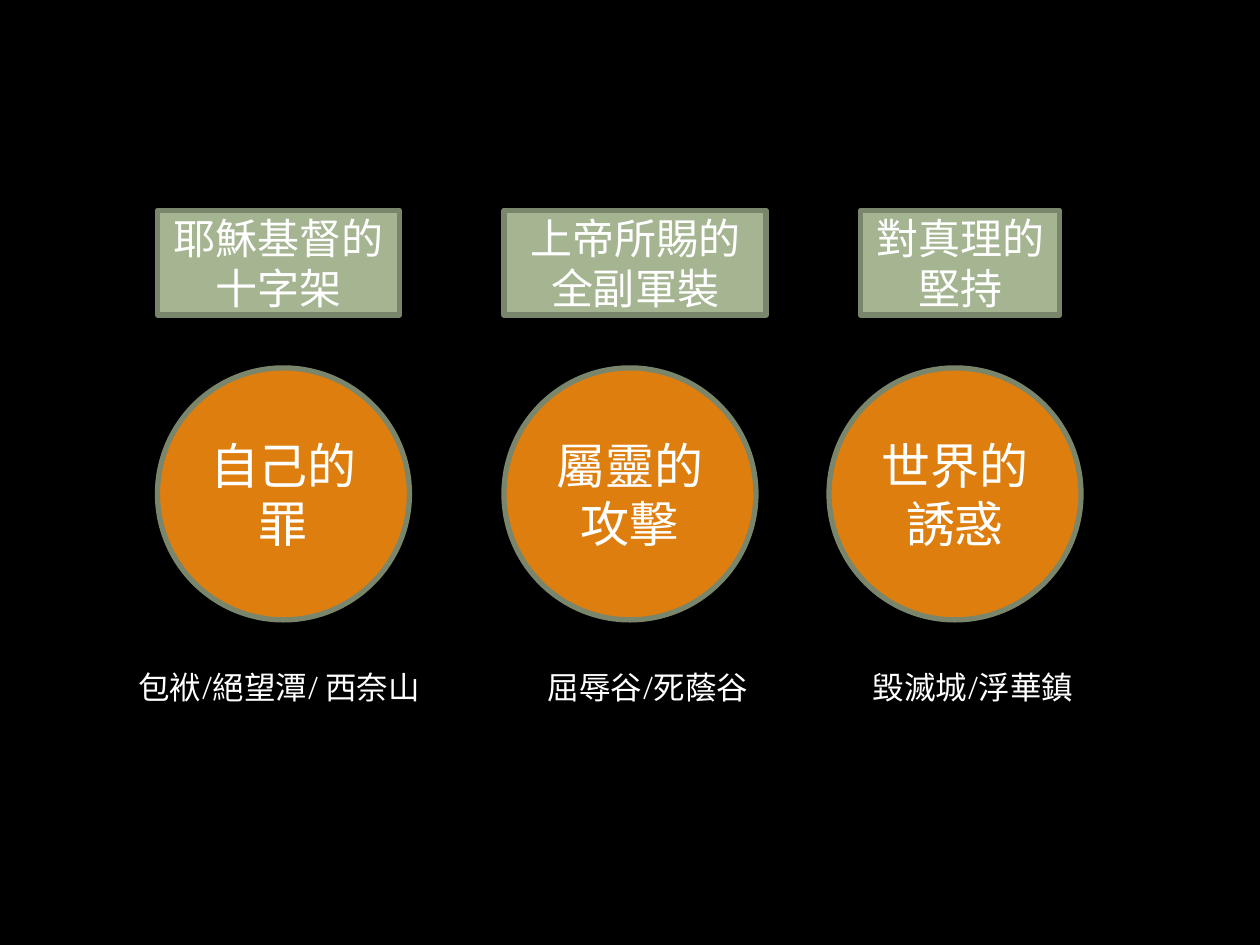
from pptx import Presentation
from pptx.dml.color import RGBColor
from pptx.enum.shapes import MSO_SHAPE
from pptx.enum.text import MSO_ANCHOR, MSO_AUTO_SIZE, PP_ALIGN
from pptx.util import Inches, Pt

# Content: one column per struggle; each part is (text, left, width)
COLUMNS = [
    {"remedy": ("耶穌基督的十字架", 1.25, 1.92),
     "threat": ("自己的罪", 1.25, 2),
     "places": ("包袱/絕望潭/ 西奈山", 1, 2.5)},
    {"remedy": ("上帝所賜的全副軍裝", 4, 2.08),
     "threat": ("屬靈的攻擊", 4, 2),
     "places": ("屈辱谷/死蔭谷", 4.25, 1.83)},
    {"remedy": ("對真理的堅持", 6.83, 1.58),
     "threat": ("世界的誘惑", 6.58, 2),
     "places": ("毀滅城/浮華鎮", 6.83, 1.83)},
]

BLACK = RGBColor(0x00, 0x00, 0x00)
WHITE = RGBColor(0xFF, 0xFF, 0xFF)
ORANGE = RGBColor(0xDD, 0x7E, 0x0E)
SAGE = RGBColor(0xA5, 0xB5, 0x92)
MOSS = RGBColor(0x7A, 0x86, 0x6C)
FONT = "Vollkorn"

# Rows: top, height and format of each part
ROWS = {
    "remedy": (1.67, 0.83, {"kind": MSO_SHAPE.RECTANGLE, "fill": SAGE, "size": 24}),
    "threat": (2.92, 2, {"kind": MSO_SHAPE.OVAL, "fill": ORANGE, "size": 28}),
    "places": (5.25, 0.4, {"size": 18}),
}


def add_text(slide, text, box, *, size, kind=None, fill=None):
    """Add text in a filled shape, or in a plain text box if kind is None."""
    place = [Inches(n) for n in box]
    if kind is None:
        shape = slide.shapes.add_textbox(*place)
    else:
        shape = slide.shapes.add_shape(kind, *place)
        shape.shadow.inherit = False
        shape.fill.solid()
        shape.fill.fore_color.rgb = fill
        shape.line.color.rgb = MOSS
        shape.line.width = Pt(3)
    frame = shape.text_frame
    frame.word_wrap = True
    para = frame.paragraphs[0]
    if kind is None:
        frame.auto_size = MSO_AUTO_SIZE.SHAPE_TO_FIT_TEXT
    else:
        frame.vertical_anchor = MSO_ANCHOR.MIDDLE
        para.alignment = PP_ALIGN.CENTER
    run = para.add_run()
    run.text = text
    run.font.name = FONT
    run.font.size = Pt(size)
    run.font.color.rgb = WHITE


def main():
    deck = Presentation()
    deck.slide_width, deck.slide_height = Inches(10), Inches(7.5)
    slide = deck.slides.add_slide(deck.slide_layouts[6])
    slide.background.fill.solid()
    slide.background.fill.fore_color.rgb = BLACK

    # Remedy above, threat in the middle, places below
    for column in COLUMNS:
        for part, (top, height, style) in ROWS.items():
            text, left, width = column[part]
            add_text(slide, text, (left, top, width, height), **style)

    deck.save("out.pptx")


if __name__ == "__main__":
    main()
